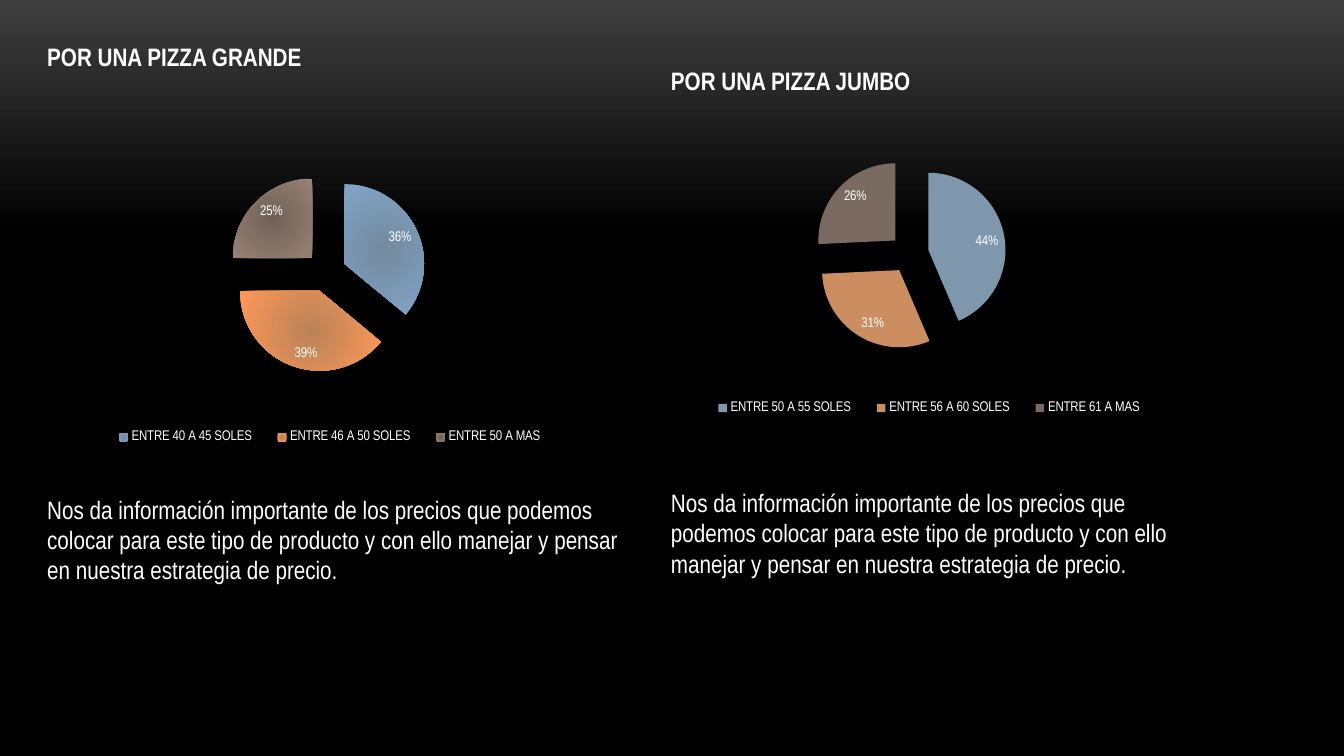
from dataclasses import dataclass

import pptx
import pptx.util
import pptx.chart.data
import pptx.dml.color
import pptx.enum.chart
import pptx.enum.text
import pptx.oxml
import pptx.oxml.ns
from pptx.util import Cm

RGBColor = pptx.dml.color.RGBColor
WHITE = RGBColor(0xFF, 0xFF, 0xFF)
BLACK = RGBColor(0x00, 0x00, 0x00)
CHARCOAL = RGBColor(0x3F, 0x3F, 0x3F)
BLUE = RGBColor(0x7E, 0x97, 0xAD)
ORANGE = RGBColor(0xCC, 0x8E, 0x60)
BROWN = RGBColor(0x7A, 0x6A, 0x60)
FLAT = [(BLUE,), (ORANGE,), (BROWN,)]
GLOW = [
    (RGBColor(0x74, 0x8A, 0x9E), RGBColor(0x80, 0xA4, 0xC8)),
    (RGBColor(0xBA, 0x82, 0x58), RGBColor(0xFF, 0x98, 0x58)),
    (RGBColor(0x70, 0x61, 0x58), RGBColor(0x98, 0x82, 0x74)),
]
FONT = "Arial Narrow"
LINE_PT = 21.57
COMMENT = (
    "Nos da información importante de los precios que podemos colocar para este tipo de "
    "producto y con ello manejar y pensar en nuestra estrategia de precio."
)
Box = tuple[float, float, float, float]


@dataclass
class PizzaPanel:
    heading: str
    text_box: Box
    gap_lines: int
    chart_box: Box
    plot_box: Box
    legend_box: Box
    prices: list[str]
    shares: list[int]
    fills: list[tuple[RGBColor, ...]]


PANELS = [
    PizzaPanel(
        "POR UNA PIZZA GRANDE", (0.94, 0.91, 15.19, 15.65), 14,
        (1.17, 4.11, 14.43, 7.39), (0.285, 0.033, 0.408, 0.679), (0.09, 0.89, 0.81, 0.09),
        ["ENTRE 40 A 45 SOLES", "ENTRE 46 A 50 SOLES", "ENTRE 50 A MAS"], [36, 39, 25], GLOW,
    ),
    PizzaPanel(
        "POR UNA PIZZA JUMBO", (16.66, 1.52, 13.59, 14.88), 13,
        (16.26, 3.73, 14.45, 7.16), (0.257, 0.033, 0.408, 0.679), (0.09, 0.87, 0.81, 0.09),
        ["ENTRE 50 A 55 SOLES", "ENTRE 56 A 60 SOLES", "ENTRE 61 A MAS"], [44, 31, 26], FLAT,
    ),
]


def chart_layout(box: Box, inner: bool):
    target = '<c:layoutTarget val="inner"/>' if inner else ""
    modes = "".join(f'<c:{k}Mode val="edge"/>' for k in "xy")
    sizes = "".join(f'<c:{k} val="{v}"/>' for k, v in zip("xywh", box))
    return pptx.oxml.parse_xml(
        f'<c:layout {pptx.oxml.ns.nsdecls("c")}><c:manualLayout>'
        f"{target}{modes}{sizes}</c:manualLayout></c:layout>"
    )


def style_font(font, size: float, bold: bool = False) -> None:
    font.name = FONT
    font.size = pptx.util.Pt(size)
    font.bold = bold
    font.color.rgb = WHITE


def add_text(s, panel: PizzaPanel) -> None:
    sp = s.shapes.add_textbox(*map(Cm, panel.text_box))
    tf = sp.text_frame
    tf.word_wrap = True
    tf.auto_size = pptx.enum.text.MSO_AUTO_SIZE.NONE
    p = tf.paragraphs[0]
    r = p.add_run()
    r.text = panel.heading
    style_font(r.font, 18, True)
    p = tf.add_paragraph()
    p.space_before = pptx.util.Pt(round(panel.gap_lines * LINE_PT))
    r = p.add_run()
    r.text = COMMENT
    style_font(r.font, 18)


def fill_slice(fill, colors: tuple[RGBColor, ...]) -> None:
    if len(colors) == 1:
        fill.solid()
        fill.fore_color.rgb = colors[0]
        return
    fill.gradient()
    for stop, color, position in zip(fill.gradient_stops, colors, (0, 1)):
        stop.color.rgb = color
        stop.position = position


def add_pie(s, panel: PizzaPanel) -> None:
    data = pptx.chart.data.CategoryChartData()
    data.categories = panel.prices
    data.add_series("Series 1", panel.shares)
    chart = s.shapes.add_chart(
        pptx.enum.chart.XL_CHART_TYPE.PIE, *map(Cm, panel.chart_box), data
    ).chart
    style_font(chart.font, 10)
    chart.has_title = False
    chart.has_legend = True
    chart.legend.position = pptx.enum.chart.XL_LEGEND_POSITION.BOTTOM
    chart.legend.include_in_layout = False
    style_font(chart.legend.font, 10)

    plot = chart.plots[0]
    plot.vary_by_categories = True
    plot.has_data_labels = True
    labels = plot.data_labels
    labels.show_percentage = True
    labels.show_value = False
    labels.number_format = "0%"
    labels.number_format_is_linked = False
    labels.position = pptx.enum.chart.XL_LABEL_POSITION.INSIDE_END
    style_font(labels.font, 10)
    for i, colors in enumerate(panel.fills):
        point = plot.series[0].points[i]
        fill_slice(point.format.fill, colors)
        point.format.line.fill.background()

    root = chart.element if hasattr(chart, "element") else chart._chartSpace
    first_point = root.xpath(".//c:ser/c:dPt")[0]
    first_point.addprevious(
        pptx.oxml.parse_xml(f'<c:explosion {pptx.oxml.ns.nsdecls("c")} val="25"/>')
    )
    for lin in root.xpath(".//c:dPt//a:gradFill/a:lin"):
        lin.getparent().replace(lin, pptx.oxml.parse_xml(
            f'<a:path {pptx.oxml.ns.nsdecls("a")} path="circle">'
            '<a:fillToRect l="50000" t="50000" r="50000" b="50000"/></a:path>'
        ))
    for old in root.xpath(".//c:plotArea/c:layout | .//c:legend/c:layout"):
        old.getparent().remove(old)
    root.xpath(".//c:plotArea")[0].insert(0, chart_layout(panel.plot_box, True))
    root.xpath(".//c:legendPos")[0].addnext(chart_layout(panel.legend_box, False))


def main() -> None:
    prs = pptx.Presentation()
    prs.slide_width, prs.slide_height = Cm(33.87), Cm(19.05)
    s = prs.slides.add_slide(prs.slide_layouts[6])
    fill = s.background.fill
    fill.gradient()
    fill.gradient_angle = 270
    for stop, color, position in zip(fill.gradient_stops, (CHARCOAL, BLACK), (0, 0.31)):
        stop.color.rgb = color
        stop.position = position
    for panel in PANELS:
        add_text(s, panel)
        add_pie(s, panel)
    prs.save("out.pptx")


if __name__ == "__main__":
    main()
